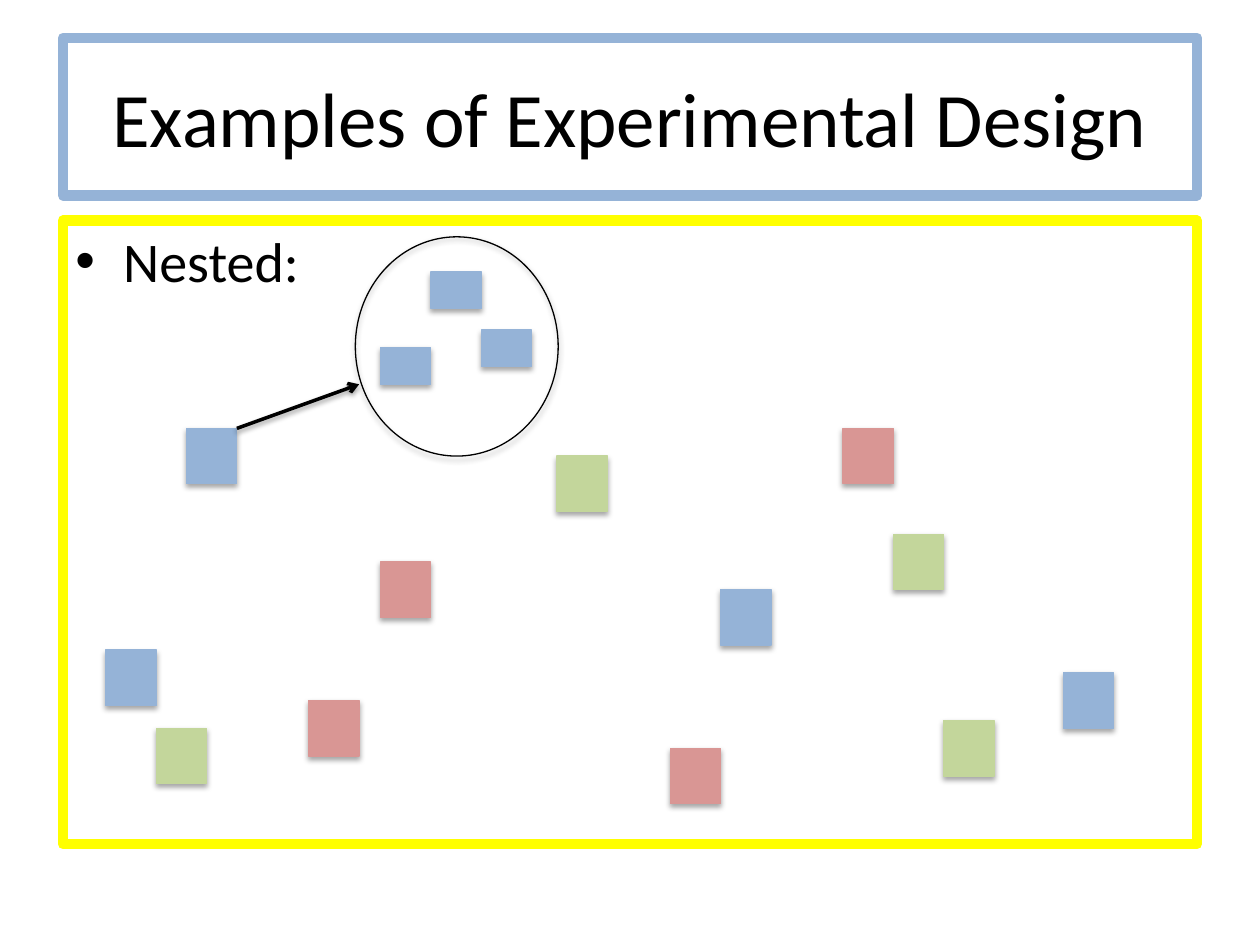
from lxml.etree import SubElement
from pptx import Presentation
from pptx.dml.color import RGBColor
from pptx.enum.shapes import MSO_CONNECTOR, MSO_SHAPE
from pptx.enum.text import MSO_ANCHOR, PP_ALIGN
from pptx.oxml.ns import qn
from pptx.util import Inches, Pt

BLUE, GREEN, RED = "95B3D7", "C3D69B", "D99694"
BLACK, YELLOW = "000000", "FFFF00"
PLOT_SIZE = (0.4, 0.44)
SUBPLOT_SIZE = (0.4, 0.29)
PLOTS = {
    BLUE: [(1.48, 3.4), (0.84, 5.16), (5.72, 4.68), (8.44, 5.34)],
    GREEN: [(1.24, 5.78), (4.42, 3.62), (7.49, 5.72), (7.09, 4.24)],
    RED: [(2.45, 5.56), (3.02, 4.46), (5.32, 5.94), (6.69, 3.4)],
}
SUBPLOTS = [(3.42, 2.16), (3.02, 2.76), (3.82, 2.62)]


def color(value):
    return RGBColor.from_string(value)


def set_line(line, value, width):
    line.color.rgb = color(value)
    line.width = Pt(width)


def add_shadow(properties, opacity=35, distance=1.8):
    """Give a shape's spPr a soft black shadow falling straight down."""
    effects = properties.find(qn("a:effectLst"))
    if effects is None:
        effects = SubElement(properties, qn("a:effectLst"))
    shadow = SubElement(effects, qn("a:outerShdw"), blurRad=str(Pt(3.1)),
                        dist=str(Pt(distance)), dir="5400000", rotWithShape="0")
    black = SubElement(shadow, qn("a:srgbClr"), val=BLACK)
    SubElement(black, qn("a:alpha"), val=str(opacity * 1000))


def format_text(frame, text, size):
    frame.text = text
    frame.word_wrap = True
    para = frame.paragraphs[0]
    font = para.runs[0].font
    font.name = "Calibri"
    font.size = Pt(size)
    font.color.rgb = color(BLACK)
    return para


def set_title(slide, text):
    title = slide.shapes.title
    title.left, title.top = Inches(0.5), Inches(0.3)
    title.width, title.height = Inches(9), Inches(1.25)
    set_line(title.line, BLUE, 6)
    para = format_text(title.text_frame, text, 44)
    para.alignment = PP_ALIGN.CENTER
    title.text_frame.vertical_anchor = MSO_ANCHOR.MIDDLE


def add_bullet_box(slide, text):
    box = slide.shapes.add_textbox(Inches(0.5), Inches(1.75), Inches(9), Inches(4.95))
    set_line(box.line, YELLOW, 6)
    para = format_text(box.text_frame, text, 32)
    para.space_before = Pt(6.4)
    properties = para._p.get_or_add_pPr()
    properties.set("marL", str(Inches(0.38)))
    properties.set("indent", str(Inches(-0.38)))
    SubElement(properties, qn("a:buFont"), typeface="Arial")
    SubElement(properties, qn("a:buChar"), char="•")


def add_figure(slide, kind, position, size, line, fill=None):
    shape = slide.shapes.add_shape(kind, *map(Inches, position + size))
    if fill:
        shape.fill.solid()
        shape.fill.fore_color.rgb = color(fill)
    else:
        shape.fill.background()
    set_line(shape.line, line, 0.75)
    shape.shadow.inherit = False
    add_shadow(shape._element.spPr)


def add_arrow(slide, start, end):
    arrow = slide.shapes.add_connector(MSO_CONNECTOR.STRAIGHT, *map(Inches, start + end))
    set_line(arrow.line, BLACK, 2)
    SubElement(arrow.line._get_or_add_ln(), qn("a:tailEnd"), type="arrow")
    add_shadow(arrow._element.spPr, opacity=38, distance=1.6)


def main():
    deck = Presentation()
    deck.slide_width, deck.slide_height = Inches(10), Inches(7.5)
    slide = deck.slides.add_slide(deck.slide_layouts[5])
    set_title(slide, "Examples of Experimental Design")
    add_bullet_box(slide, "Nested:")
    for treatment, positions in PLOTS.items():
        for position in positions:
            add_figure(slide, MSO_SHAPE.RECTANGLE, position, PLOT_SIZE, treatment, treatment)
    add_figure(slide, MSO_SHAPE.OVAL, (2.82, 1.88), (1.61, 1.74), BLACK)
    for position in SUBPLOTS:
        add_figure(slide, MSO_SHAPE.RECTANGLE, position, SUBPLOT_SIZE, BLUE, BLUE)
    add_arrow(slide, (1.88, 3.4), (2.85, 3.05))
    deck.save("out.pptx")


if __name__ == "__main__":
    main()
